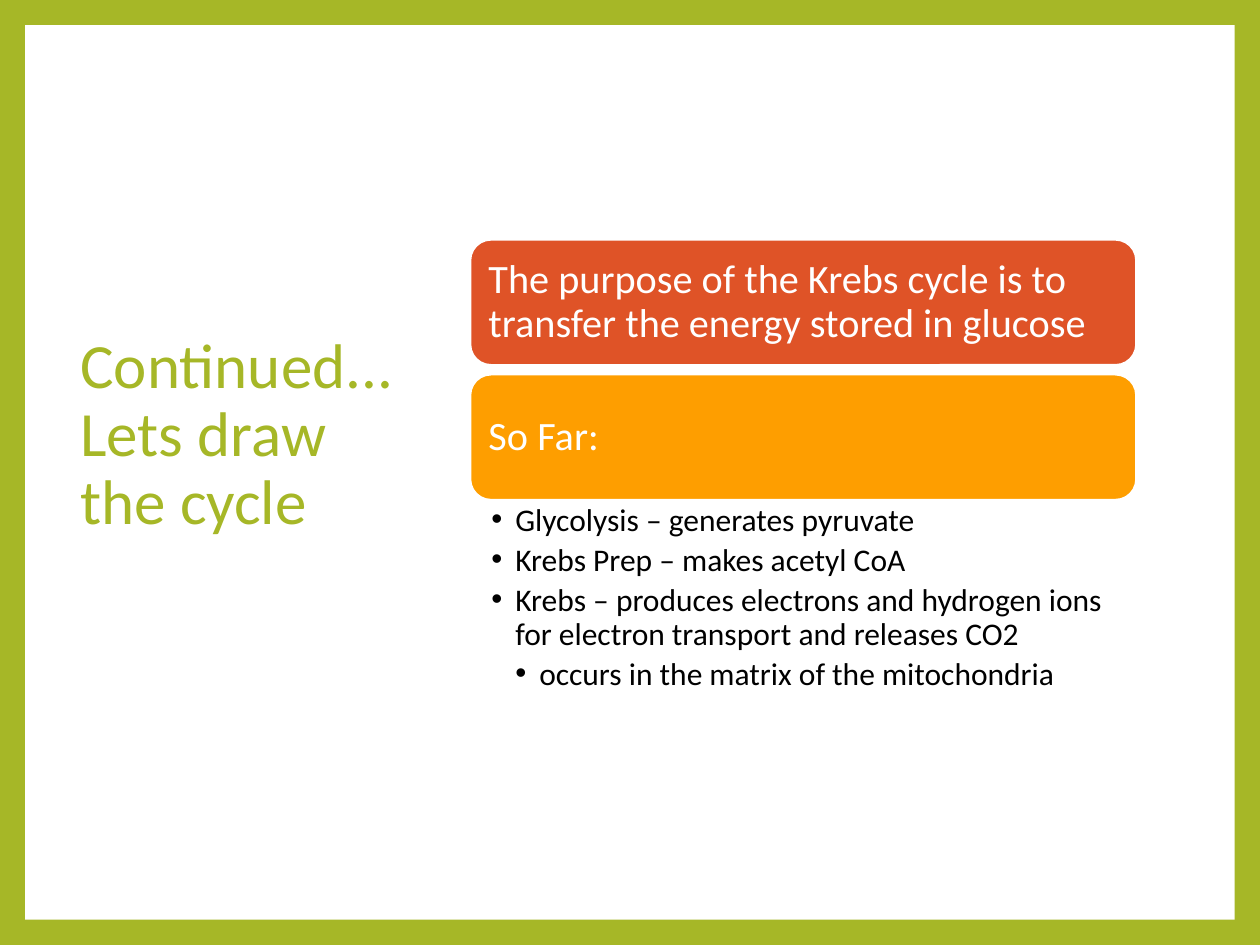
from lxml import etree
from pptx import Presentation
from pptx import util as u
from pptx.dml.color import RGBColor
from pptx.enum import shapes, text
from pptx.oxml.ns import qn

TITLE = "Continued... Lets draw the cycle"
CARDS = [
    ("The purpose of the Krebs cycle is to transfer the energy stored in glucose", "DF5327"),
    ("So Far:", "FE9E00"),
]
STEPS = [  # (indent level, wording)
    (1, "Glycolysis – generates pyruvate"),
    (1, "Krebs Prep – makes acetyl CoA"),
    (1, "Krebs – produces electrons and hydrogen ions for electron transport and releases CO2"),
    (2, "occurs in the matrix of the mitochondria"),
]
GREEN, WHITE, BLACK = "A6B727", "FFFFFF", "000000"
WIDTH, HEIGHT, BORDER = 10, 7.5, 0.2
LEFT, TOP, CARD_W, CARD_H, GAP = 3.73, 1.9, 5.29, 1, 0.07
INDENT = 0.19


def color(value):
    return RGBColor.from_string(value)


def add_block(kind, box, fill, line=None):
    block = slide.shapes.add_shape(kind, *map(u.Inches, box))
    block.shadow.inherit = False
    block.fill.solid()
    block.fill.fore_color.rgb = color(fill)
    if line:
        block.line.color.rgb = color(line)
        block.line.width = u.Pt(1.5)
    else:
        block.line.fill.background()
    return block


def set_frame(frame, anchor, insets):
    settings = dict(zip(("margin_left", "margin_top", "margin_right", "margin_bottom"),
                        map(u.Inches, insets)), word_wrap=True, vertical_anchor=anchor)
    for name, value in settings.items():
        setattr(frame, name, value)


def write(paragraph, words, size, ink, after=0):
    paragraph.alignment = text.PP_ALIGN.LEFT
    paragraph.line_spacing = 0.9
    paragraph.space_after = u.Pt(after)
    run = paragraph.add_run()
    run.text = words
    for name, value in {"name": "Calibri", "size": u.Pt(size)}.items():
        setattr(run.font, name, value)
    run.font.color.rgb = color(ink)


def add_bullet(paragraph, level):
    props = paragraph._p.get_or_add_pPr()
    props.set("marL", str(u.Inches(INDENT * level)))
    props.set("indent", str(u.Inches(-INDENT)))
    etree.SubElement(props, qn("a:buFont")).set("typeface", "Arial")
    etree.SubElement(props, qn("a:buChar")).set("char", "•")


prs = Presentation()
prs.slide_width, prs.slide_height = u.Inches(WIDTH), u.Inches(HEIGHT)
slide = prs.slides.add_slide(prs.slide_layouts[6])

# Green border around a white panel
slide.background.fill.solid()
slide.background.fill.fore_color.rgb = color(GREEN)
add_block(shapes.MSO_SHAPE.RECTANGLE,
          (BORDER, BORDER, WIDTH - 2 * BORDER, HEIGHT - 2 * BORDER), WHITE)

# Title, set slightly above the middle by its bottom inset
title = slide.shapes.add_textbox(*map(u.Inches, (0.54, 0.67, 2.76, 6.13))).text_frame
set_frame(title, text.MSO_ANCHOR.MIDDLE, (0.1, 0.05, 0.1, 0.6))
write(title.paragraphs[0], TITLE, 36, GREEN)

# Stacked cards
for row, (words, fill) in enumerate(CARDS):
    top = TOP + row * (CARD_H + GAP)
    card = add_block(shapes.MSO_SHAPE.ROUNDED_RECTANGLE, (LEFT, top, CARD_W, CARD_H), fill, WHITE)
    set_frame(card.text_frame, text.MSO_ANCHOR.MIDDLE, (0.1, 0.1, 0.1, 0.1))
    write(card.text_frame.paragraphs[0], words, 23, WHITE)

# Steps so far, directly under the last card
steps_box = (LEFT, top + CARD_H, CARD_W, 1.64)
steps = slide.shapes.add_textbox(*map(u.Inches, steps_box)).text_frame
set_frame(steps, text.MSO_ANCHOR.TOP, (0.17, 0.03, 0.18, 0.03))
for number, (level, words) in enumerate(STEPS):
    step = steps.add_paragraph() if number else steps.paragraphs[0]
    write(step, words, 18, BLACK, after=3.4)
    add_bullet(step, level)

prs.save("out.pptx")
